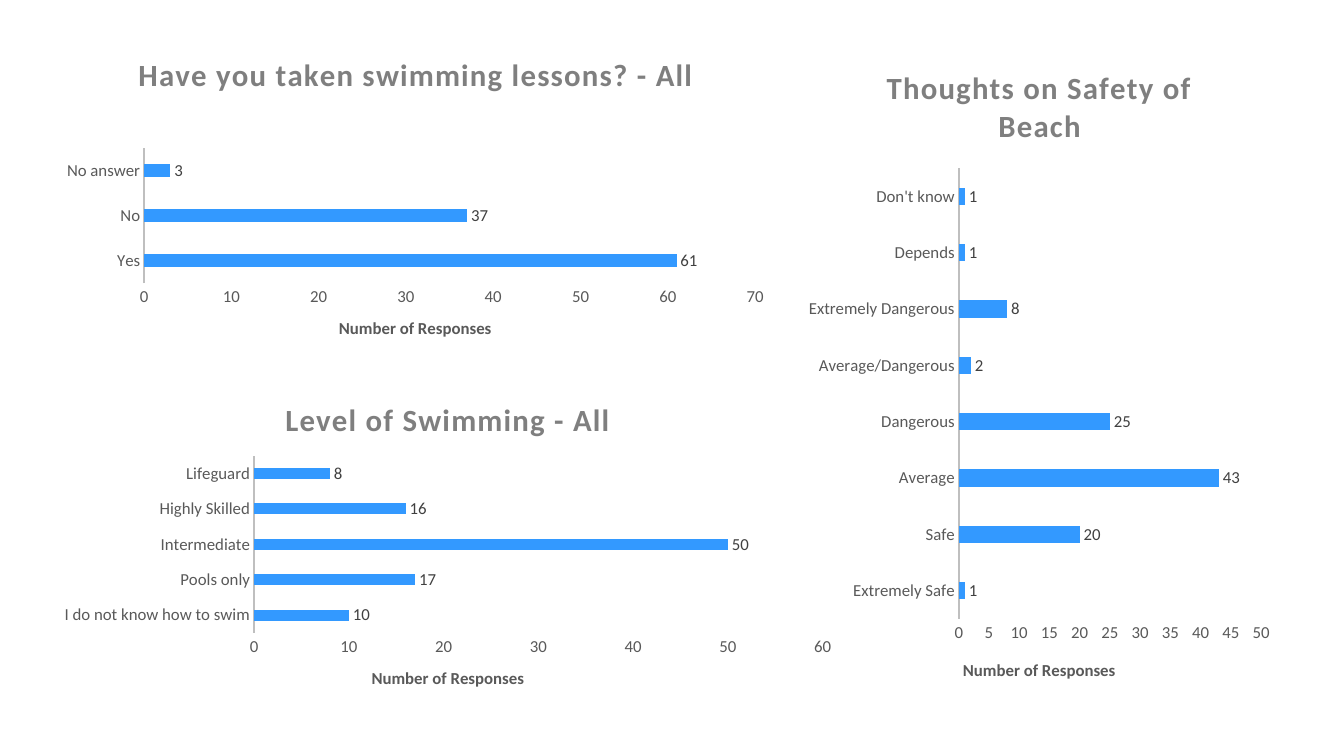
from lxml import etree
from pptx import Presentation
from pptx.chart.data import CategoryChartData
from pptx.dml.color import RGBColor
from pptx.enum import chart as charts
from pptx.oxml import ns
from pptx.util import Inches, Pt

BAR_BLUE = RGBColor(0x33, 0x99, 0xFF)
TITLE_GRAY = RGBColor(0x7F, 0x7F, 0x7F)
AXIS_GRAY = RGBColor(0x59, 0x59, 0x59)
LABEL_GRAY = RGBColor(0x40, 0x40, 0x40)
LINE_GRAY = RGBColor(0xBF, 0xBF, 0xBF)


def write_title(owner, content, *, size, color, spacing=0):
    owner.has_title = True
    title = owner.chart_title if hasattr(owner, "chart_title") else owner.axis_title
    run = title.text_frame.paragraphs[0].add_run()
    run.text = content
    format_font(run.font, size=size, color=color, bold=True)
    run.font._element.set("spc", str(spacing))


def format_font(font, *, size, color, bold=False):
    font.name = "Calibri"
    font.size = Pt(size)
    font.bold = bold
    font.color.rgb = color


surveys = [
    {
        "title": "Thoughts on Safety of Beach",
        "frame": (7.93, 0.42, 4.76, 6.55),
        "plot": (9.51, 1.67, 3.0, 4.47),
        "scale": (50, 5),
        "responses": {
            "Extremely Safe": 1, "Safe": 20, "Average": 43, "Dangerous": 25,
            "Average/Dangerous": 2, "Extremely Dangerous": 8, "Depends": 1,
            "Don't know": 1,
        },
    },
    {
        "title": "Level of Swimming - All",
        "frame": (0.48, 3.78, 7.92, 3.26),
        "plot": (2.52, 4.52, 5.64, 1.76),
        "scale": (60, 10),
        "responses": {
            "I do not know how to swim": 10, "Pools only": 17,
            "Intermediate": 50, "Highly Skilled": 16, "Lifeguard": 8,
        },
    },
    {
        "title": "Have you taken swimming lessons? - All",
        "frame": (0.52, 0.36, 7.21, 3.22),
        "plot": (1.43, 1.47, 6.06, 1.34),
        "scale": (70, 10),
        "responses": {"Yes": 61, "No": 37, "No answer": 3},
    },
]

presentation = Presentation()
presentation.slide_width = Inches(13.33)
presentation.slide_height = Inches(7.5)
slide = presentation.slides.add_slide(presentation.slide_layouts[6])

for survey in surveys:
    data = CategoryChartData()
    data.categories = list(survey["responses"])
    data.add_series("Series 1", list(survey["responses"].values()))
    left, top, width, height = survey["frame"]
    chart = slide.shapes.add_chart(
        charts.XL_CHART_TYPE.BAR_CLUSTERED,
        Inches(left), Inches(top), Inches(width), Inches(height), data,
    ).chart
    chart.has_legend = False
    chart.font.name = "Calibri"
    chart.font.size = Pt(10)
    write_title(chart, survey["title"], size=22, color=TITLE_GRAY, spacing=100)
    chart.chart_title.include_in_layout = False

    plot = chart.plots[0]
    plot.gap_width = 227
    plot.overlap = -48
    plot.vary_by_categories = False
    fill = plot.series[0].format.fill
    fill.solid()
    fill.fore_color.rgb = BAR_BLUE

    plot.has_data_labels = True
    labels = plot.data_labels
    labels.show_value = True
    labels.position = charts.XL_LABEL_POSITION.OUTSIDE_END
    format_font(labels.font, size=12, color=LABEL_GRAY)

    for axis in (chart.category_axis, chart.value_axis):
        axis.has_major_gridlines = False
        axis.major_tick_mark = charts.XL_TICK_MARK.NONE
        axis.minor_tick_mark = charts.XL_TICK_MARK.NONE
        format_font(axis.tick_labels.font, size=12, color=AXIS_GRAY)
    chart.category_axis.format.line.color.rgb = LINE_GRAY
    chart.category_axis.format.line.width = Pt(1.5)
    value_axis = chart.value_axis
    value_axis.format.line.fill.background()
    value_axis.minimum_scale = 0
    value_axis.maximum_scale, value_axis.major_unit = survey["scale"]
    write_title(value_axis, "Number of Responses", size=12, color=AXIS_GRAY)

    plot_left, plot_top, plot_width, plot_height = survey["plot"]
    area = chart._chartSpace.chart.plotArea
    for old_layout in area.findall(ns.qn("c:layout")):
        area.remove(old_layout)
    layout = etree.Element(ns.qn("c:layout"))
    manual = etree.SubElement(layout, ns.qn("c:manualLayout"))
    settings = {
        "layoutTarget": "inner", "xMode": "edge", "yMode": "edge",
        "x": (plot_left - left) / width, "y": (plot_top - top) / height,
        "w": plot_width / width, "h": plot_height / height,
    }
    for name, value in settings.items():
        etree.SubElement(manual, ns.qn(f"c:{name}")).set("val", str(value))
    area.insert(0, layout)

presentation.save("out.pptx")
